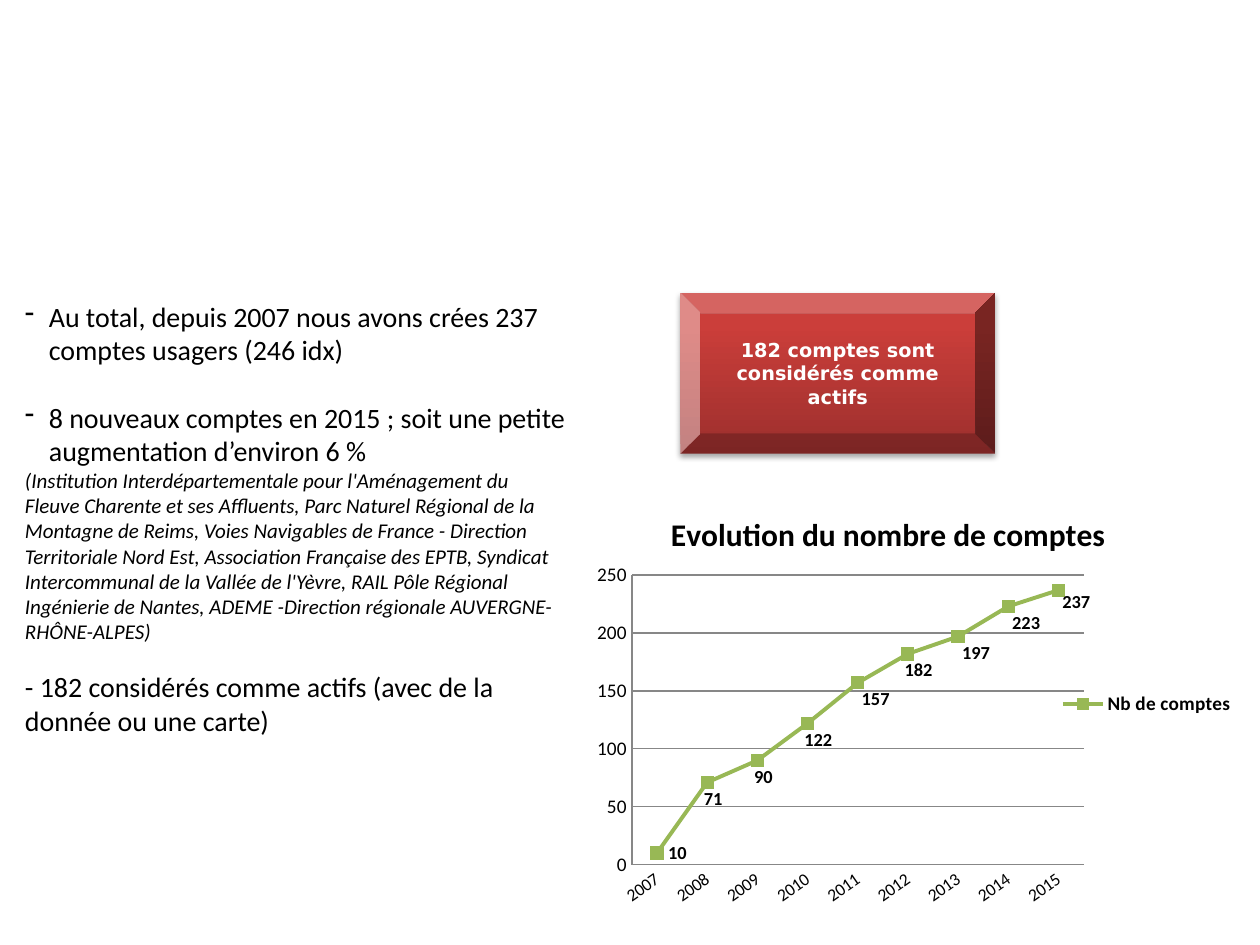
from dataclasses import dataclass

from lxml.etree import SubElement
from pptx import Presentation
from pptx.chart.data import CategoryChartData
from pptx.dml.color import RGBColor
from pptx.enum.chart import (XL_CHART_TYPE, XL_LABEL_POSITION,
                             XL_LEGEND_POSITION, XL_MARKER_STYLE, XL_TICK_MARK)
from pptx.enum.shapes import MSO_SHAPE
from pptx.enum.text import MSO_ANCHOR, MSO_AUTO_SIZE, PP_ALIGN
from pptx.oxml import parse_xml
from pptx.oxml.ns import nsdecls, qn
from pptx.util import Inches, Pt

WIDE, HIGH = 10, 7.5
BLACK, WHITE, GREEN, GRAY = "000000", "FFFFFF", "98B855", "878787"


@dataclass
class Box:
    """A frame in shares of the slide's size."""
    left: float
    top: float
    width: float
    height: float

    def place(self) -> tuple:
        return (Inches(self.left * WIDE), Inches(self.top * HIGH),
                Inches(self.width * WIDE), Inches(self.height * HIGH))


@dataclass
class Para:
    text: str
    size: float = 16
    dash: bool = False
    italic: bool = False
    before: float = 0


@dataclass
class Count:
    """One year's total, with its label's shift in shares of the chart."""
    year: str
    total: int
    dx: float = 0
    dy: float = 0


NOTES = [
    Para("Au total, depuis 2007 nous avons crées 237 comptes usagers (246 idx)",
         dash=True),
    Para("8 nouveaux comptes en 2015 ; soit une petite augmentation "
         "d’environ 6 %", dash=True, before=19.5),
    Para("(Institution Interdépartementale pour l'Aménagement du Fleuve "
         "Charente et ses Affluents, Parc Naturel Régional de la Montagne de "
         "Reims, Voies Navigables de France - Direction Territoriale Nord Est, "
         "Association Française des EPTB, Syndicat Intercommunal de la Vallée "
         "de l'Yèvre, RAIL Pôle Régional Ingénierie de Nantes, ADEME "
         "-Direction régionale AUVERGNE-RHÔNE-ALPES)", 12, italic=True),
    Para("- 182 considérés comme actifs (avec de la donnée ou une carte)",
         before=14.6),
]
COUNTS = [
    Count("2007", 10), Count("2008", 71, -0.02, 0.04),
    Count("2009", 90, -0.02, 0.04), Count("2010", 122, -0.02, 0.04),
    Count("2011", 157, -0.01, 0.04), Count("2012", 182, -0.02, 0.04),
    Count("2013", 197, -0.01, 0.04), Count("2014", 223, -0.01, 0.04),
    Count("2015", 237, -0.01, 0.03),
]


def hue(code: str) -> RGBColor:
    return RGBColor.from_string(code)


def style(font, size: float, color: str = BLACK, bold: bool = False,
          italic: bool = False, name: str = "Calibri") -> None:
    font.name, font.size = name, Pt(size)
    font.bold, font.italic = bold, italic
    font.color.rgb = hue(color)


def layout(**parts):
    """Build a manual chart layout from its named values."""
    root = parse_xml(f"<c:layout {nsdecls('c')}/>")
    manual = SubElement(root, qn("c:manualLayout"))
    for tag, val in parts.items():
        SubElement(manual, qn(f"c:{tag}"), val=str(val))
    return root


def write(slide, box: Box, paras: list[Para]) -> None:
    frame = slide.shapes.add_textbox(*box.place()).text_frame
    frame.word_wrap = True
    frame.auto_size = MSO_AUTO_SIZE.SHAPE_TO_FIT_TEXT
    for i, item in enumerate(paras):
        para = frame.add_paragraph() if i else frame.paragraphs[0]
        para.text = item.text
        if item.dash:
            props = para._p.get_or_add_pPr()
            props.set("marL", str(Inches(0.19)))
            props.set("indent", str(Inches(-0.19)))
            SubElement(props, qn("a:buChar"), char="-")
        if item.before:
            para.space_before = Pt(item.before)
        style(para.font, item.size, italic=item.italic)


def badge(slide, box: Box, text: str) -> None:
    shape = slide.shapes.add_shape(MSO_SHAPE.BEVEL, *box.place())
    shape.line.fill.background()
    shape.fill.gradient()
    grad = shape._element.spPr.find(qn("a:gradFill"))
    stops = grad.find(qn("a:gsLst"))
    for old in list(stops):
        stops.remove(old)
    for pos, code in ((0, "9C2F2D"), (80, "CB3E3A"), (100, "CE3B37")):
        stop = SubElement(stops, qn("a:gs"), pos=str(pos * 1000))
        SubElement(stop, qn("a:srgbClr"), val=code)
    grad.find(qn("a:lin")).set("ang", str(270 * 60000))
    shape.shadow.inherit = False
    shade = SubElement(shape._element.spPr.find(qn("a:effectLst")),
                       qn("a:outerShdw"), blurRad=str(Pt(3.1)),
                       dist=str(Pt(1.8)), dir=str(90 * 60000), rotWithShape="0")
    tint = SubElement(shade, qn("a:srgbClr"), val=BLACK)
    SubElement(tint, qn("a:alpha"), val="35000")
    frame = shape.text_frame
    frame.word_wrap = True
    frame.vertical_anchor = MSO_ANCHOR.MIDDLE
    para = frame.paragraphs[0]
    para.text, para.alignment = text, PP_ALIGN.CENTER
    style(para.font, 11, WHITE, bold=True, name="DejaVu Sans")


def label(series, counts: list[Count]) -> None:
    tags = series.data_labels
    tags.show_value = True
    tags.position = XL_LABEL_POSITION.RIGHT
    style(tags.font, 10.5, bold=True)
    for i, item in enumerate(counts):
        if item.dy:
            tag = series.points[i].data_label
            style(tag.font, 10.5, bold=True)
            tag.position = XL_LABEL_POSITION.RIGHT
    shifted = [item for item in counts if item.dy]
    for node, item in zip(series._element.iter(qn("c:dLbl")), shifted):
        node.insert(1, layout(x=item.dx, y=item.dy))


def graph(slide, box: Box, counts: list[Count]) -> None:
    data = CategoryChartData()
    data.categories = [item.year for item in counts]
    data.add_series("Nb de comptes", [item.total for item in counts])
    chart = slide.shapes.add_chart(XL_CHART_TYPE.LINE_MARKERS, *box.place(),
                                   data).chart
    style(chart.font, 10)
    title = chart.chart_title
    title.text_frame.text = "Evolution du nombre de comptes"
    style(title.text_frame.paragraphs[0].font, 18, bold=True)
    title._element.find(qn("c:tx")).addnext(
        layout(xMode="edge", yMode="edge", x=0.15, y=0.07))
    title.include_in_layout = False

    area = chart._chartSpace.chart.plotArea
    for old in area.findall(qn("c:layout")):
        area.remove(old)
    area.insert(0, layout(layoutTarget="inner", xMode="edge", yMode="edge",
                          x=0.143, y=0.197, w=0.629, h=0.681))

    years, totals = chart.category_axis, chart.value_axis
    for axis, size in ((years, 10), (totals, 11)):
        axis.major_tick_mark = axis.minor_tick_mark = XL_TICK_MARK.NONE
        axis.format.line.color.rgb = hue(GRAY)
        style(axis.tick_labels.font, size)
    turn = years._element.find(qn("c:txPr")).find(qn("a:bodyPr"))
    turn.set("rot", str(-35 * 60000))
    totals.minimum_scale, totals.maximum_scale = 0, 250
    totals.major_unit = 50
    totals.major_gridlines.format.line.color.rgb = hue(GRAY)

    chart.has_legend = True
    chart.legend.position = XL_LEGEND_POSITION.RIGHT
    chart.legend.include_in_layout = False
    style(chart.legend.font, 11, bold=True)

    chart.plots[0].vary_by_categories = False
    series = chart.plots[0].series[0]
    series.smooth = False
    series.format.line.color.rgb = hue(GREEN)
    series.format.line.width = Pt(2.25)
    mark = series.marker
    mark.style, mark.size = XL_MARKER_STYLE.SQUARE, 7
    mark.format.fill.solid()
    mark.format.fill.fore_color.rgb = hue(GREEN)
    mark.format.line.color.rgb = hue(GREEN)
    label(series, counts)


def main() -> None:
    deck = Presentation()
    deck.slide_width, deck.slide_height = Inches(WIDE), Inches(HIGH)
    slide = deck.slides.add_slide(deck.slide_layouts[6])
    write(slide, Box(0.01, 0.31, 0.45, 0.48), NOTES)
    badge(slide, Box(0.54, 0.31, 0.25, 0.17),
          "182 comptes sont considérés comme actifs")
    graph(slide, Box(0.42, 0.52, 0.57, 0.45), COUNTS)
    deck.save("out.pptx")


if __name__ == "__main__":
    main()
